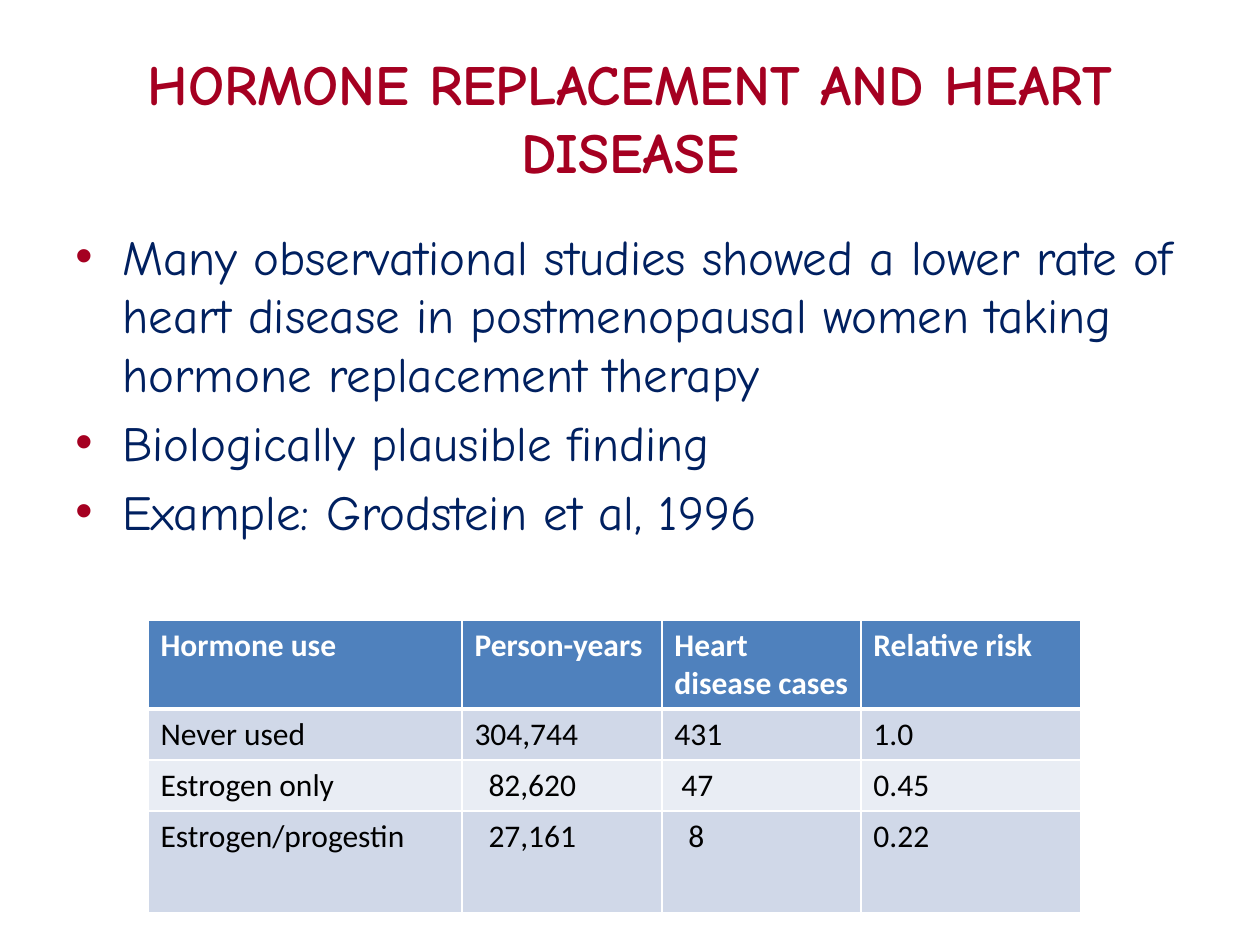
from dataclasses import dataclass

from lxml.etree import SubElement
from pptx import Presentation
from pptx.dml.color import RGBColor
from pptx.enum.text import MSO_ANCHOR, PP_ALIGN
from pptx.oxml.ns import qn
from pptx.slide import Slide
from pptx.table import _Cell
from pptx.text.text import TextFrame, _Paragraph
from pptx.util import Emu, Pt

PX_PER_INCH = 126
COLORS = {
    "crimson": "A50021",
    "navy": "002060",
    "header": "4F81BD",
    "band_dark": "D0D8E8",
    "band_light": "E9EDF4",
    "white": "FFFFFF",
    "black": "000000",
}
HEADING_FONT = "Comic Neue"
TABLE_FONT = "Calibri"
HANGING = 47
DIGIT_PAD = 7


@dataclass(frozen=True)
class Area:
    left: int
    top: int
    width: int
    height: int


@dataclass(frozen=True)
class Style:
    font: str
    size: float
    color: str
    bold: bool = False


@dataclass(frozen=True)
class Row:
    height: int
    fill: str
    texts: tuple[str, ...]
    pads: tuple[int, ...] = (0, 0, 0, 0)


TITLE_AREA = Area(63, 38, 1134, 157)
BODY_AREA = Area(63, 220, 1134, 708)
TABLE_LEFT, TABLE_TOP = 148, 620
COLUMN_WIDTHS = (314, 200, 199, 220)

TITLE_STYLE = Style(HEADING_FONT, 32.4, "crimson", True)
BODY_STYLE = Style(HEADING_FONT, 28, "navy")
HEADER_STYLE = Style(TABLE_FONT, 18, "white", True)
CELL_STYLE = Style(TABLE_FONT, 18, "black")

TITLE = "HORMONE REPLACEMENT AND HEART DISEASE"
POINTS = (
    "Many observational studies showed a lower rate of heart disease in "
    "postmenopausal women taking hormone replacement therapy",
    "Biologically plausible finding",
    "Example: Grodstein et al, 1996",
)
ROWS = (
    Row(89, "header", ("Hormone use", "Person-years", "Heart disease cases", "Relative risk")),
    Row(51, "band_dark", ("Never used", "304,744", "431", "1.0")),
    Row(51, "band_light", ("Estrogen only", "82,620", "47", "0.45"), (0, 2, 1, 0)),
    Row(102, "band_dark", ("Estrogen/progestin", "27,161", "8", "0.22"), (0, 2, 2, 0)),
)


def px(value: int) -> Emu:
    return Emu(round(value * 914400 / PX_PER_INCH))


def add_span(para: _Paragraph, text: str, style: Style) -> None:
    span = para.add_run()
    span.text = text
    span.font.name = style.font
    span.font.size = Pt(style.size)
    span.font.bold = style.bold
    span.font.color.rgb = RGBColor.from_string(COLORS[style.color])


def add_box(page: Slide, area: Area, anchor: MSO_ANCHOR) -> TextFrame:
    box = page.shapes.add_textbox(px(area.left), px(area.top), px(area.width), px(area.height))
    frame = box.text_frame
    frame.word_wrap = True
    frame.vertical_anchor = anchor
    return frame


def add_bullet(para: _Paragraph, color: str) -> None:
    properties = para._p.get_or_add_pPr()
    properties.set("marL", str(px(HANGING)))
    properties.set("indent", str(-px(HANGING)))
    bullet_color = SubElement(properties, qn("a:buClr"))
    SubElement(bullet_color, qn("a:srgbClr"), val=COLORS[color])
    SubElement(properties, qn("a:buFont"), typeface="Arial")
    SubElement(properties, qn("a:buChar"), char="•")


def add_points(page: Slide) -> None:
    frame = add_box(page, BODY_AREA, MSO_ANCHOR.TOP)
    for index, text in enumerate(POINTS):
        para = frame.add_paragraph() if index else frame.paragraphs[0]
        para.space_before = Pt(BODY_STYLE.size * 0.2)
        add_bullet(para, "crimson")
        add_span(para, text, BODY_STYLE)


def set_borders(cell: _Cell, top: int, bottom: int) -> None:
    properties = cell._tc.get_or_add_tcPr()
    for side, points in (("L", 1), ("R", 1), ("T", top), ("B", bottom)):
        line = SubElement(properties, qn(f"a:ln{side}"), w=str(Pt(points)))
        fill = SubElement(line, qn("a:solidFill"))
        SubElement(fill, qn("a:srgbClr"), val=COLORS["white"])


def add_risk_table(page: Slide) -> None:
    table = page.shapes.add_table(
        len(ROWS), len(COLUMN_WIDTHS), px(TABLE_LEFT), px(TABLE_TOP),
        px(sum(COLUMN_WIDTHS)), px(sum(row.height for row in ROWS)),
    ).table
    for column, width in zip(table.columns, COLUMN_WIDTHS):
        column.width = px(width)
    for index, row in enumerate(ROWS):
        table.rows[index].height = px(row.height)
        style = CELL_STYLE if index else HEADER_STYLE
        for place, (text, pad) in enumerate(zip(row.texts, row.pads)):
            cell = table.cell(index, place)
            set_borders(cell, 3 if index == 1 else 1, 3 if index == 0 else 1)
            cell.fill.solid()
            cell.fill.fore_color.rgb = RGBColor.from_string(COLORS[row.fill])
            para = cell.text_frame.paragraphs[0]
            if pad:
                para._p.get_or_add_pPr().set("marL", str(px(pad * DIGIT_PAD)))
            add_span(para, text, style)


def main() -> None:
    deck = Presentation()
    deck.slide_width, deck.slide_height = px(1260), px(945)
    page = deck.slides.add_slide(deck.slide_layouts[6])
    title = add_box(page, TITLE_AREA, MSO_ANCHOR.MIDDLE).paragraphs[0]
    title.alignment = PP_ALIGN.CENTER
    add_span(title, TITLE, TITLE_STYLE)
    add_points(page)
    add_risk_table(page)
    deck.save("out.pptx")


if __name__ == "__main__":
    main()
